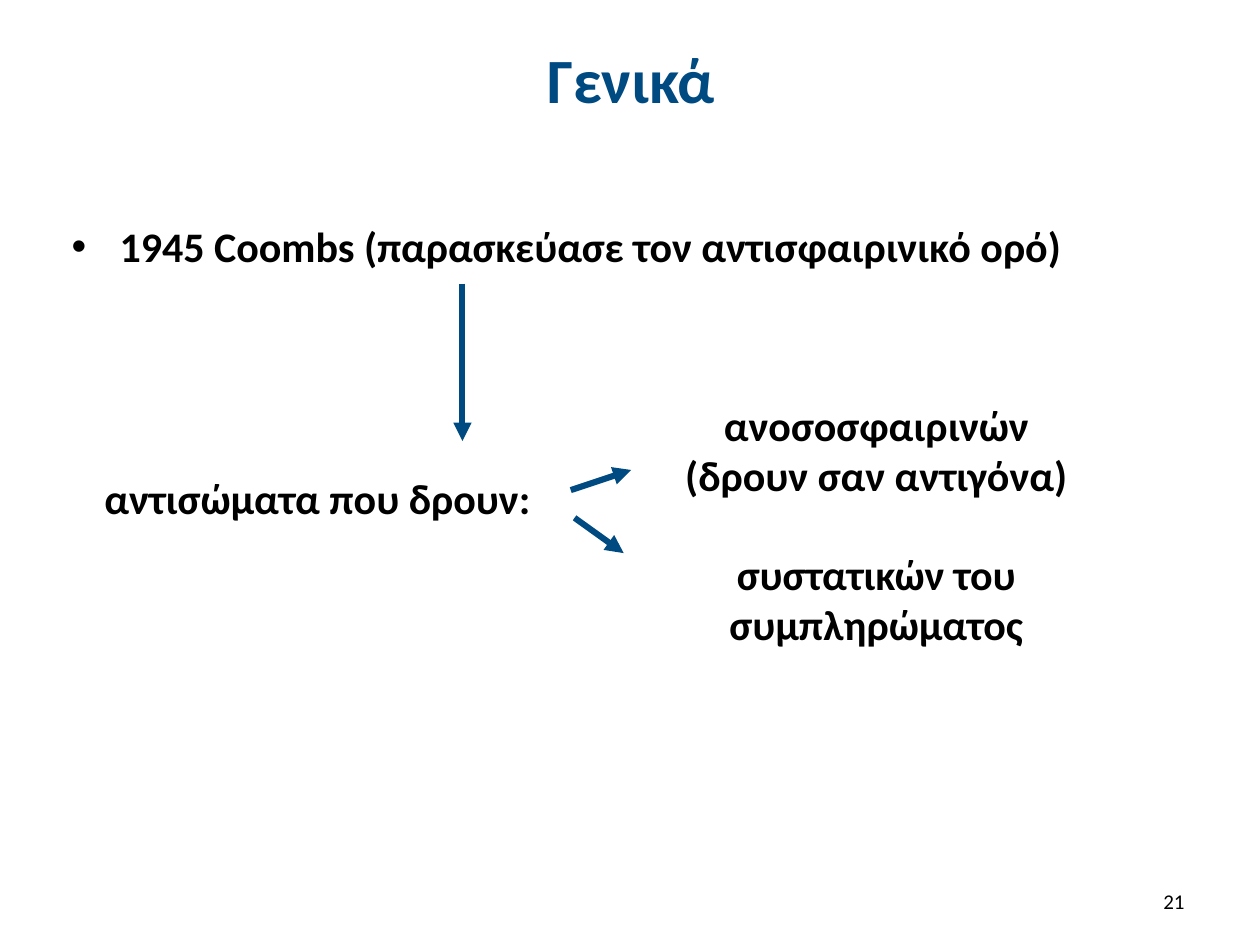
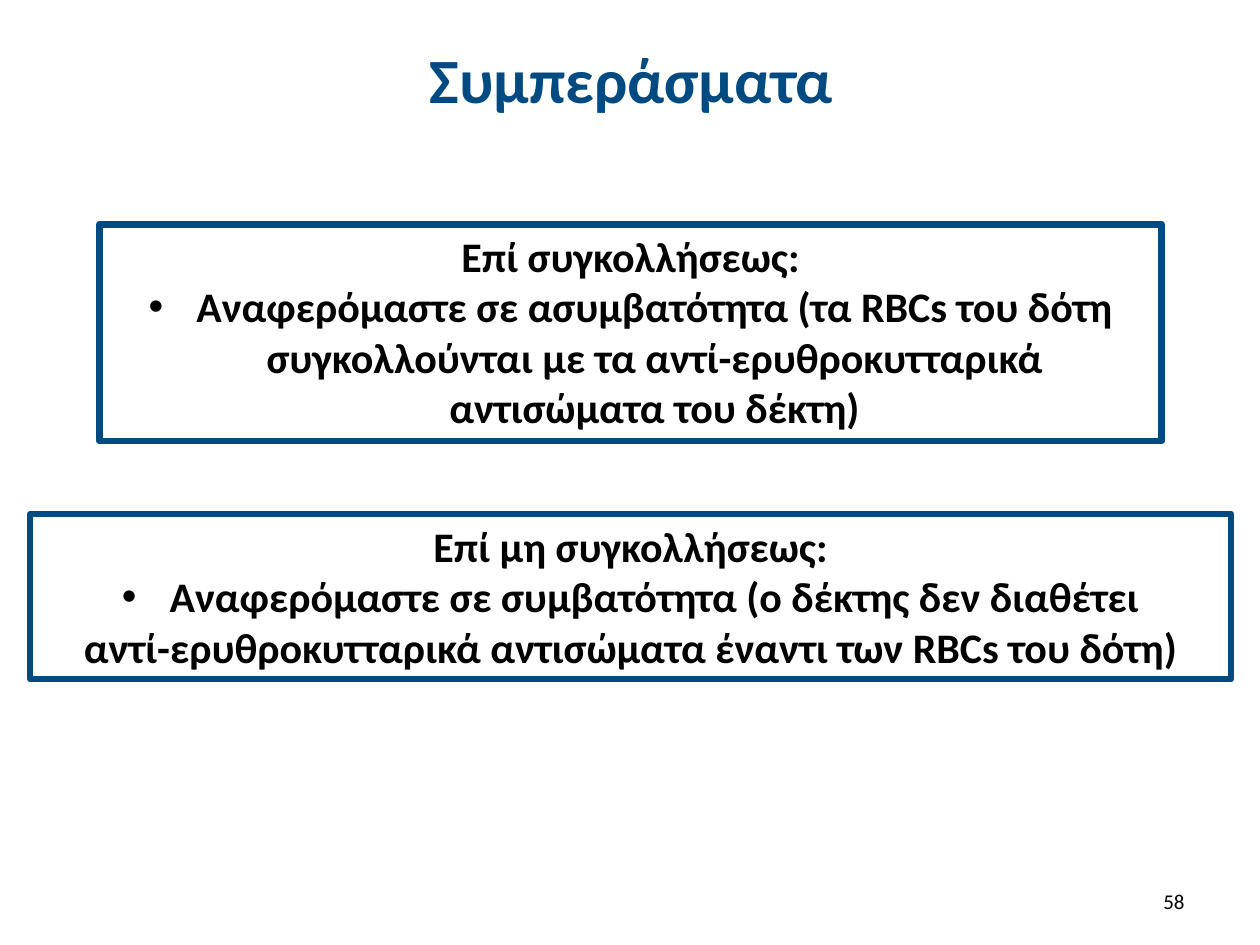
"""Builds two slides on antiglobulin serum and its conclusions."""
from dataclasses import dataclass

from lxml import etree
from pptx import Presentation
from pptx import util as u
from pptx.dml.color import RGBColor
from pptx.enum import shapes, text
from pptx.oxml import ns

NAVY = RGBColor(0x00, 0x4A, 0x82)
BLACK = RGBColor(0x00, 0x00, 0x00)
FONT = "Calibri"
BULLET_INDENT = u.Inches(0.38)
LEFT, CENTER, RIGHT = text.PP_ALIGN.LEFT, text.PP_ALIGN.CENTER, text.PP_ALIGN.RIGHT
TOP, MIDDLE = text.MSO_ANCHOR.TOP, text.MSO_ANCHOR.MIDDLE


@dataclass(frozen=True)
class Line:
    """One paragraph, with or without a bullet."""
    wording: str
    bullet: bool = False


@dataclass(frozen=True)
class Block:
    """A body text block; a framed block has an outline and wraps."""
    left: float
    top: float
    width: float
    height: float
    lines: tuple[Line, ...]
    align: text.PP_ALIGN = CENTER
    framed: bool = False


@dataclass(frozen=True)
class Arrow:
    """A straight arrow from start to end."""
    start: tuple[float, float]
    end: tuple[float, float]


GENERAL_BLOCKS = (
    Block(0.47, 1.7, 8.12, 0.5,
          (Line("1945 Coombs (παρασκεύασε τον αντισφαιρινικό ορό)", True),), LEFT),
    Block(0.73, 3.7, 3.58, 0.5, (Line("αντισώματα που δρουν:"),), LEFT),
    Block(5.29, 3.12, 3.33, 0.91,
          (Line("ανοσοσφαιρινών"), Line("(δρουν σαν αντιγόνα)"))),
    Block(5.64, 4.3, 2.63, 0.91,
          (Line("συστατικών του"), Line("συμπληρώματος"))),
)
GENERAL_ARROWS = (
    Arrow((3.67, 2.25), (3.67, 3.5)),
    Arrow((4.53, 3.89), (5.01, 3.73)),
    Arrow((4.56, 4.11), (4.95, 4.39)),
)
CONCLUSION_BLOCKS = (
    Block(0.79, 1.78, 8.43, 1.72, (
        Line("Επί συγκολλήσεως:"),
        Line("Αναφερόμαστε σε ασυμβατότητα (τα RBCs του δότη συγκολλούνται "
             "με τα αντί-ερυθροκυτταρικά αντισώματα του δέκτη)", True),
    ), framed=True),
    Block(0.24, 4.08, 9.53, 1.31, (
        Line("Επί μη συγκολλήσεως:"),
        Line("Αναφερόμαστε σε συμβατότητα (ο δέκτης δεν διαθέτει", True),
        Line("αντί-ερυθροκυτταρικά αντισώματα έναντι των RBCs του δότη)"),
    ), framed=True),
)


def add_bullet(paragraph) -> None:
    """Give the paragraph a round bullet with a hanging indent."""
    properties = paragraph._p.get_or_add_pPr()
    properties.set("marL", str(BULLET_INDENT))
    properties.set("indent", str(-BULLET_INDENT))
    etree.SubElement(properties, ns.qn("a:buFont")).set("typeface", "Arial")
    etree.SubElement(properties, ns.qn("a:buChar")).set("char", "•")


def write_lines(shape, lines: tuple[Line, ...], size: float, color: RGBColor,
                align: text.PP_ALIGN, anchor: text.MSO_ANCHOR, bold: bool = True) -> None:
    """Fill the shape with uniformly formatted paragraphs."""
    frame = shape.text_frame
    frame.vertical_anchor = anchor
    frame.text = "\n".join(line.wording for line in lines)
    for paragraph, line in zip(frame.paragraphs, lines):
        paragraph.alignment = align
        if line.bullet:
            add_bullet(paragraph)
        for run in paragraph.runs:
            run.font.name = FONT
            run.font.size = u.Pt(size)
            run.font.bold = bold
            run.font.color.rgb = color


def add_block(slide, block: Block) -> None:
    """Draw one block of body text."""
    place = [u.Inches(v) for v in (block.left, block.top, block.width, block.height)]
    if block.framed:
        shape = slide.shapes.add_shape(shapes.MSO_SHAPE.RECTANGLE, *place)
        shape.shadow.inherit = False
        shape.fill.background()
        shape.line.color.rgb = NAVY
        shape.line.width = u.Pt(3.75)
    else:
        shape = slide.shapes.add_textbox(*place)
    shape.text_frame.word_wrap = block.framed
    shape.text_frame.auto_size = text.MSO_AUTO_SIZE.SHAPE_TO_FIT_TEXT
    write_lines(shape, block.lines, 24, BLACK, block.align, TOP)


def add_arrow(slide, arrow: Arrow) -> None:
    """Draw one arrow with a triangular head."""
    connector = slide.shapes.add_connector(
        shapes.MSO_CONNECTOR.STRAIGHT,
        *(u.Inches(v) for v in arrow.start + arrow.end))
    connector.line.color.rgb = NAVY
    connector.line.width = u.Pt(3.5)
    etree.SubElement(connector.line._get_or_add_ln(), ns.qn("a:tailEnd")).set("type", "triangle")
    etree.SubElement(connector._element.spPr, ns.qn("a:effectLst"))


def add_slide(presentation, title: str, number: int, blocks: tuple[Block, ...],
              arrows: tuple[Arrow, ...] = ()) -> None:
    """Add a slide with its title, body and page number."""
    slide = presentation.slides.add_slide(presentation.slide_layouts[5])
    heading = slide.shapes.title
    heading.left, heading.top = u.Inches(0.51), u.Inches(0.13)
    heading.width, heading.height = u.Inches(9), u.Inches(0.99)
    heading.text_frame.auto_size = text.MSO_AUTO_SIZE.NONE
    write_lines(heading, (Line(title),), 36, NAVY, CENTER, MIDDLE)
    for block in blocks:
        add_block(slide, block)
    for arrow in arrows:
        add_arrow(slide, arrow)
    page = slide.shapes.add_textbox(
        u.Inches(7.17), u.Inches(6.95), u.Inches(2.33), u.Inches(0.4))
    page.text_frame.word_wrap = True
    write_lines(page, (Line(str(number)),), 12, BLACK, RIGHT, MIDDLE, bold=False)


def main() -> None:
    """Build and save the presentation."""
    presentation = Presentation()
    presentation.slide_width, presentation.slide_height = u.Inches(10), u.Inches(7.5)
    add_slide(presentation, "Γενικά", 21, GENERAL_BLOCKS, GENERAL_ARROWS)
    add_slide(presentation, "Συμπεράσματα", 58, CONCLUSION_BLOCKS)
    presentation.save("out.pptx")


if __name__ == "__main__":
    main()
